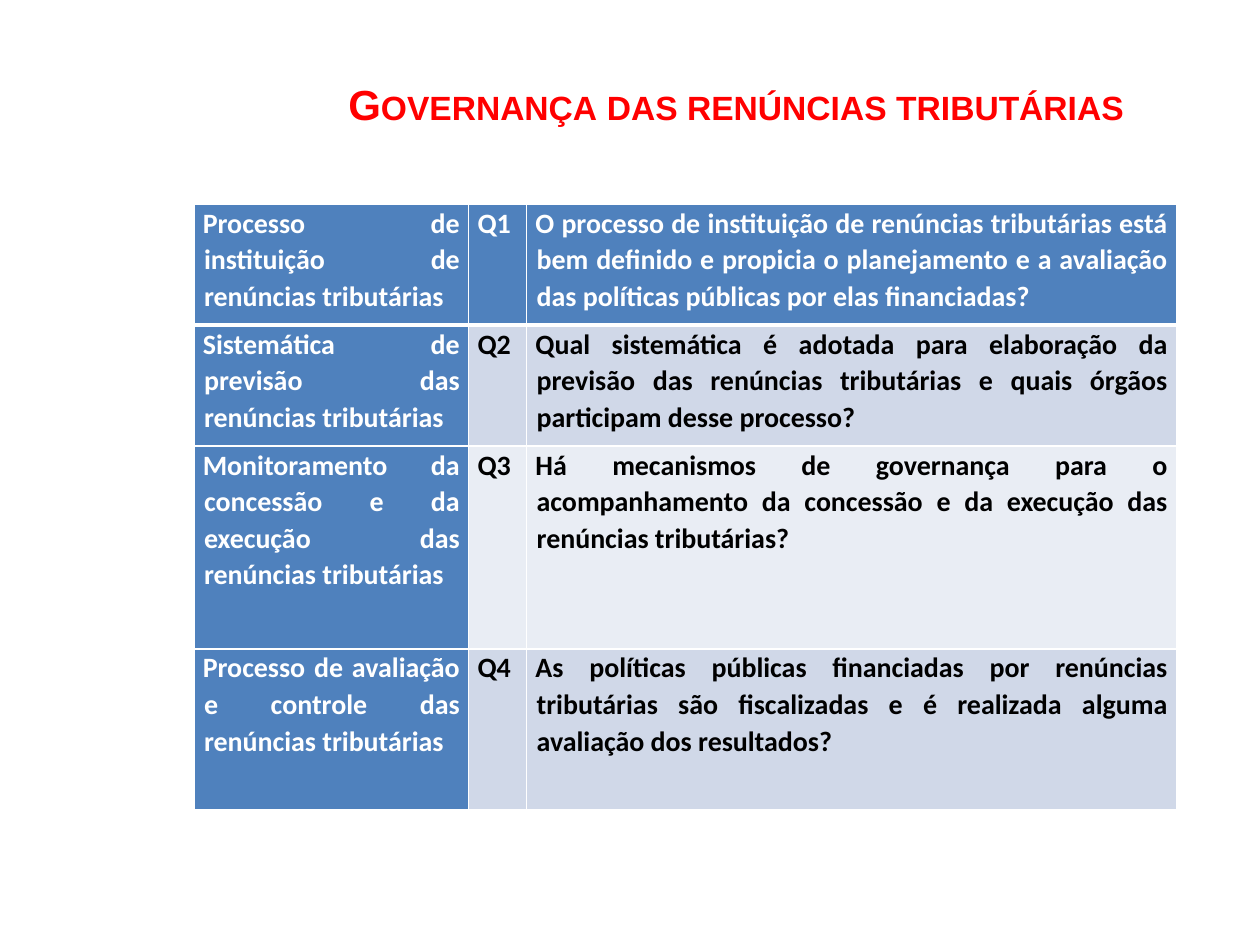
from lxml.etree import SubElement
from pptx import Presentation
from pptx.dml.color import RGBColor
from pptx.enum.text import MSO_ANCHOR, PP_ALIGN
from pptx.oxml.ns import qn
from pptx.util import Inches, Pt

RED = RGBColor(0xFF, 0x00, 0x00)
WHITE = RGBColor(0xFF, 0xFF, 0xFF)
BLACK = RGBColor(0x00, 0x00, 0x00)
BLUE = RGBColor(0x4F, 0x81, 0xBD)
BAND_DARK = RGBColor(0xD0, 0xD8, 0xE8)
BAND_LIGHT = RGBColor(0xE9, 0xED, 0xF4)

COLUMN_WIDTHS = (2.18, 0.46, 5.16)
ROW_HEIGHTS = (0.96, 0.96, 1.61, 1.28)
HANGING_INDENTS = (0.01, 0.5, 0.01)
QUESTIONS = (
    ("Processo de instituição de renúncias tributárias", "Q1",
     "O processo de instituição de renúncias tributárias está bem definido e propicia "
     "o planejamento e a avaliação das políticas públicas por elas financiadas?"),
    ("Sistemática de previsão das renúncias tributárias", "Q2",
     "Qual sistemática é adotada para elaboração da previsão das renúncias tributárias "
     "e quais órgãos participam desse processo?"),
    ("Monitoramento da concessão e da execução das renúncias tributárias", "Q3",
     "Há mecanismos de governança para o acompanhamento da concessão e da execução "
     "das renúncias tributárias?"),
    ("Processo de avaliação e controle das renúncias tributárias", "Q4",
     "As políticas públicas financiadas por renúncias tributárias são fiscalizadas "
     "e é realizada alguma avaliação dos resultados?"),
)


def write_text(text_frame, text, *, font, size, color, align, small_caps=False,
               line_spacing=None, hanging=None):
    """Write one bold paragraph in the given format."""
    paragraph = text_frame.paragraphs[0]
    paragraph.alignment = align
    if line_spacing:
        paragraph.line_spacing = line_spacing
    if hanging is not None:
        properties = paragraph._p.get_or_add_pPr()
        properties.set("marL", str(Inches(hanging)))
        properties.set("indent", str(-Inches(hanging)))
    run = paragraph.add_run()
    run.text = text
    run.font.name = font
    run.font.size = Pt(size)
    run.font.bold = True
    run.font.color.rgb = color
    if small_caps:
        run.font._element.set("cap", "small")


class SlideBuilder:
    """Hold the style and the current slide."""

    title_font = "Arial"
    table_font = "Calibri"
    title_size = 24
    table_size = 16

    def __init__(self, presentation):
        self.slide = presentation.slides.add_slide(presentation.slide_layouts[5])

    def title(self, text, left, top, width, height):
        """Place and format the title placeholder."""
        shape = self.slide.shapes.title
        shape.left, shape.top = Inches(left), Inches(top)
        shape.width, shape.height = Inches(width), Inches(height)
        shape.fill.solid()
        shape.fill.fore_color.rgb = WHITE
        shape.text_frame.vertical_anchor = MSO_ANCHOR.MIDDLE
        write_text(shape.text_frame, text, font=self.title_font, size=self.title_size,
                   color=RED, align=PP_ALIGN.RIGHT, small_caps=True)

    def table(self, rows, left, top):
        """Add the table of questions with its header row and column."""
        frame = self.slide.shapes.add_table(
            len(rows), len(COLUMN_WIDTHS), Inches(left), Inches(top),
            Inches(sum(COLUMN_WIDTHS)), Inches(sum(ROW_HEIGHTS)))
        table = frame.table
        for column, width in zip(table.columns, COLUMN_WIDTHS):
            column.width = Inches(width)
        for row, height in zip(table.rows, ROW_HEIGHTS):
            row.height = Inches(height)
        for row_index, texts in enumerate(rows):
            band = BAND_DARK if row_index % 2 else BAND_LIGHT
            for column_index, text in enumerate(texts):
                is_header = row_index == 0 or column_index == 0
                cell = table.cell(row_index, column_index)
                self.borders(cell, top=3 if row_index == 1 else 1,
                             bottom=3 if row_index == 0 else 1)
                cell.fill.solid()
                cell.fill.fore_color.rgb = BLUE if is_header else band
                cell.margin_left = cell.margin_right = Inches(0.07)
                cell.margin_top = cell.margin_bottom = 0
                write_text(cell.text_frame, text, font=self.table_font,
                           size=self.table_size, color=WHITE if is_header else BLACK,
                           align=PP_ALIGN.JUSTIFY, line_spacing=1.07,
                           hanging=HANGING_INDENTS[column_index])

    def borders(self, cell, top, bottom):
        """Draw white borders around a cell."""
        properties = cell._tc.get_or_add_tcPr()
        for side, width in (("L", 1), ("R", 1), ("T", top), ("B", bottom)):
            line = SubElement(properties, qn(f"a:ln{side}"), w=str(Pt(width)))
            fill = SubElement(line, qn("a:solidFill"))
            SubElement(fill, qn("a:srgbClr"), val=str(WHITE))


def main():
    """Build and save the presentation."""
    presentation = Presentation()
    presentation.slide_width = Inches(10)
    presentation.slide_height = Inches(7.5)
    builder = SlideBuilder(presentation)
    builder.title("Governança das renúncias tributárias", 1.54, 0.36, 7.48, 0.92)
    builder.table(QUESTIONS, 1.54, 1.62)
    presentation.save("out.pptx")


if __name__ == "__main__":
    main()
